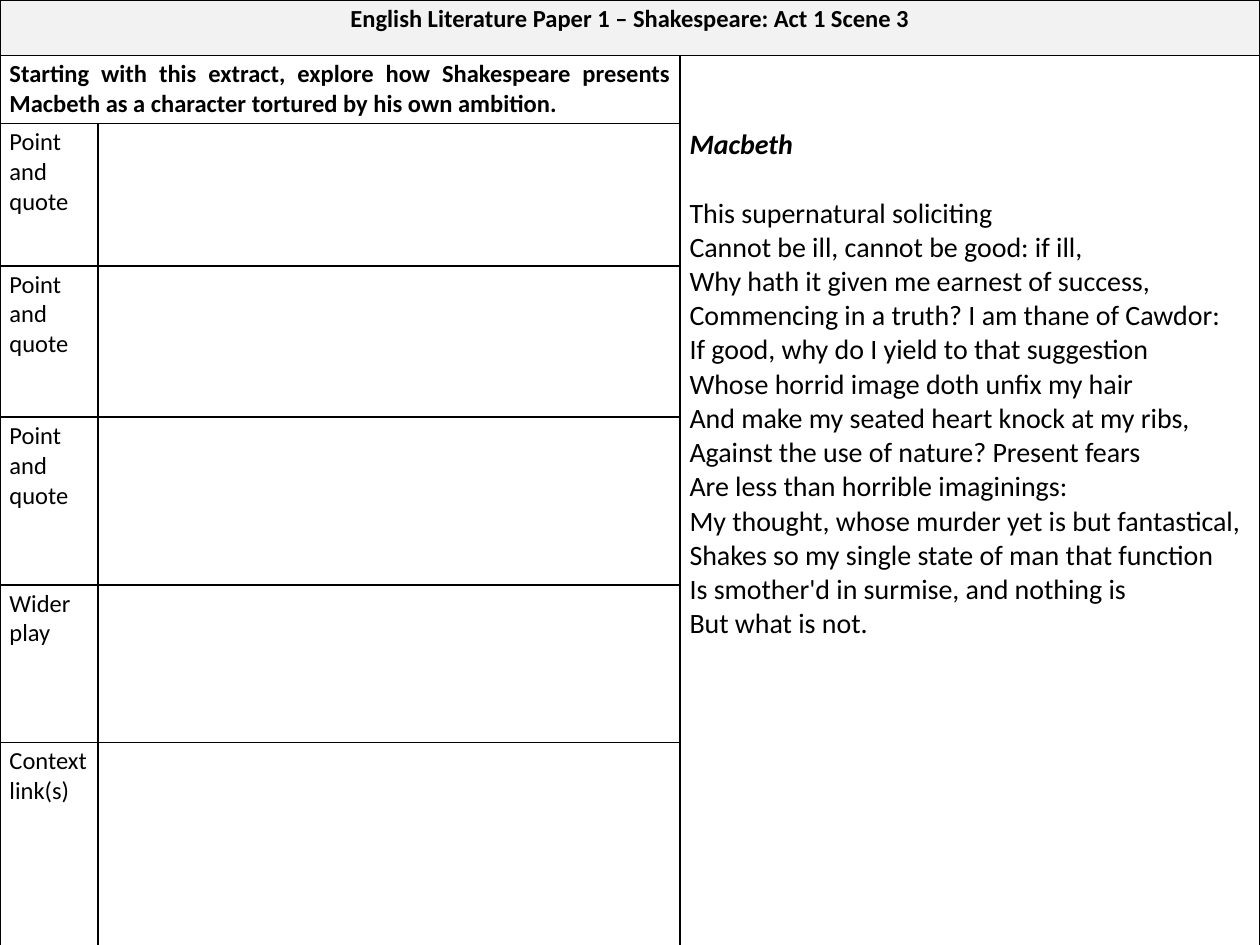
from lxml import etree
from pptx import Presentation
from pptx import util as u
from pptx.dml.color import RGBColor
from pptx.enum import text
from pptx.oxml.ns import qn

BLACK, GREY = "000000", "F2F2F2"
COL_WIDTHS = [1.98, 11.73, 11.69]
ROW_HEIGHTS = [1.12, 1.37, 2.87, 3.05, 3.38, 3.18, 4.14]
TITLE = "English Literature Paper 1 – Shakespeare: Act 1 Scene 3"
QUESTION = ("Starting with this extract, explore how Shakespeare presents "
            "Macbeth as a character tortured by his own ambition.")
PROMPTS = ["Point and quote"] * 3 + ["Wider play", "Context link(s)"]
SPEECH = [
    "This supernatural soliciting",
    "Cannot be ill, cannot be good: if ill,",
    "Why hath it given me earnest of success,",
    "Commencing in a truth? I am thane of Cawdor:",
    "If good, why do I yield to that suggestion",
    "Whose horrid image doth unfix my hair",
    "And make my seated heart knock at my ribs,",
    "Against the use of nature? Present fears",
    "Are less than horrible imaginings:",
    "My thought, whose murder yet is but fantastical,",
    "Shakes so my single state of man that function",
    "Is smother'd in surmise, and nothing is",
    "But what is not.",
]


def rgb(value):
    return RGBColor.from_string(value)


def add_borders(cell):
    tcPr = cell._tc.get_or_add_tcPr()
    for side in ("a:lnL", "a:lnR", "a:lnT", "a:lnB"):
        ln = etree.SubElement(tcPr, qn(side), w=str(u.Pt(1)))
        fill = etree.SubElement(ln, qn("a:solidFill"))
        etree.SubElement(fill, qn("a:srgbClr"), val=BLACK)


def format_cell(cell):
    """Set borders, insets and an empty fill."""
    add_borders(cell)
    cell.fill.background()
    cell.margin_left = cell.margin_right = u.Cm(0.19)
    cell.margin_top = cell.margin_bottom = u.Cm(0.08)


def add_grid(s):
    shape = s.shapes.add_table(len(ROW_HEIGHTS), len(COL_WIDTHS), 0, 0,
                               u.Cm(sum(COL_WIDTHS)), u.Cm(sum(ROW_HEIGHTS)))
    table = shape.table
    table.first_row = table.horz_banding = False
    for col, width in zip(table.columns, COL_WIDTHS):
        col.width = u.Cm(width)
    for row, height in zip(table.rows, ROW_HEIGHTS):
        row.height = u.Cm(height)
    for cell in table.iter_cells():
        format_cell(cell)
    return table


def write(cell, content, size=14, bold=False, align=None):
    tf = cell.text_frame
    tf.text = content
    for p in tf.paragraphs:
        p.alignment = align
        for r in p.runs:
            r.font.name, r.font.size, r.font.bold = "Calibri", u.Pt(size), bold
            r.font.color.rgb = rgb(BLACK)


def fill_header(table):
    title, question = table.cell(0, 0), table.cell(1, 0)
    title.merge(table.cell(0, 2))
    title.fill.solid()
    title.fill.fore_color.rgb = rgb(GREY)
    write(title, TITLE, bold=True, align=text.PP_ALIGN.CENTER)
    question.merge(table.cell(1, 1))
    write(question, QUESTION, bold=True, align=text.PP_ALIGN.JUSTIFY)


def fill_extract(table):
    cell = table.cell(1, 2)
    cell.merge(table.cell(len(ROW_HEIGHTS) - 1, 2))
    cell.margin_top = u.Cm(1.46)
    write(cell, "\n".join(["Macbeth"] + SPEECH), size=16)
    speaker = cell.text_frame.paragraphs[0]
    speaker.space_after = u.Pt(19.5)
    speaker.runs[0].font.bold = speaker.runs[0].font.italic = True


def main():
    prs = Presentation()
    prs.slide_width, prs.slide_height = u.Cm(25.4), u.Cm(19.05)
    s = prs.slides.add_slide(prs.slide_layouts[6])
    table = add_grid(s)
    fill_header(table)
    fill_extract(table)
    for row, prompt in enumerate(PROMPTS, start=2):
        write(table.cell(row, 0), prompt)
    prs.save("out.pptx")


if __name__ == "__main__":
    main()
